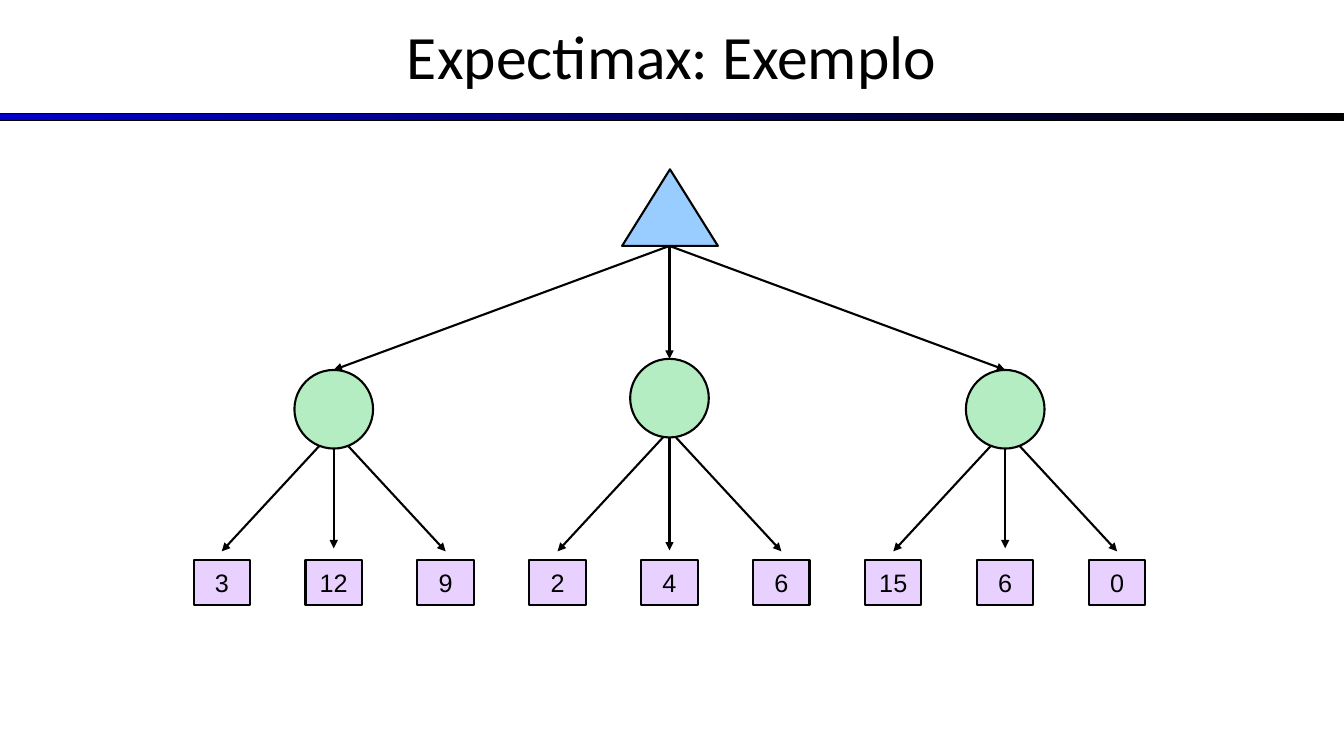
import pptx
import pptx.dml.color
import pptx.enum.shapes
import pptx.enum.text
import pptx.oxml
import pptx.oxml.ns
import pptx.util
from pptx.util import Inches

SHAPES = pptx.enum.shapes.MSO_SHAPE
BLACK = "000000"


def color(value):
    return pptx.dml.color.RGBColor.from_string(value)


def write_text(shape, text, size=18, font="Arial", fill=BLACK, wrap=False):
    frame = shape.text_frame
    frame.word_wrap = wrap
    frame.vertical_anchor = pptx.enum.text.MSO_ANCHOR.MIDDLE
    paragraph = frame.paragraphs[0]
    paragraph.alignment = pptx.enum.text.PP_ALIGN.CENTER
    run = paragraph.add_run()
    run.text = text
    run.font.size = pptx.util.Pt(size)
    run.font.name = font
    run.font.color.rgb = color(fill)


class TreeSlide:
    """Draws the elements of a game tree in one shared style."""

    def __init__(self, slide, line_width=1.5):
        self.slide = slide
        self.line_width = line_width

    def outline(self, line, width=None):
        line.color.rgb = color(BLACK)
        line.width = pptx.util.Pt(width or self.line_width)

    def title(self, text):
        box = self.slide.shapes.add_textbox(Inches(0), Inches(-0.08), Inches(13.33), Inches(1.25))
        write_text(box, text, size=44, font="Calibri", wrap=True)

    def node(self, kind, left, top, width, height, fill=None):
        shape = self.slide.shapes.add_shape(
            kind, Inches(left), Inches(top), Inches(width), Inches(height))
        shape.shadow.inherit = False
        if fill:
            shape.fill.solid()
            shape.fill.fore_color.rgb = color(fill)
        self.outline(shape.line)
        return shape

    def gradient_bar(self, top, height, start, end):
        bar = self.node(SHAPES.RECTANGLE, 0, top, 13.33, height)
        bar.fill.gradient()
        bar.fill.gradient_angle = 0
        for stop, position, value in zip(bar.fill.gradient_stops, (0, 1), (start, end)):
            stop.position = position
            stop.color.rgb = color(value)
        self.outline(bar.line, 0.75)

    def arrow(self, start_x, start_y, end_x, end_y):
        connector = self.slide.shapes.add_connector(
            pptx.enum.shapes.MSO_CONNECTOR.STRAIGHT,
            Inches(start_x), Inches(start_y), Inches(end_x), Inches(end_y))
        self.outline(connector.line)
        head = pptx.oxml.parse_xml(
            f'<a:tailEnd {pptx.oxml.ns.nsdecls("a")} type="triangle"/>')
        connector.line._get_or_add_ln().append(head)
        effects = pptx.oxml.parse_xml(f'<a:effectLst {pptx.oxml.ns.nsdecls("a")}/>')
        connector._element.spPr.append(effects)

    def leaf(self, center, value):
        box = self.node(SHAPES.RECTANGLE, center - 0.28, 5.56, 0.56, 0.44, "E8D1FF")
        write_text(box, str(value))

    def chance_node(self, center, top):
        self.node(SHAPES.OVAL, center - 0.39, top, 0.78, 0.78, "B5EDC2")


def main():
    presentation = pptx.Presentation()
    presentation.slide_width = Inches(13.33)
    presentation.slide_height = Inches(7.5)
    tree = TreeSlide(presentation.slides.add_slide(presentation.slide_layouts[6]))

    tree.gradient_bar(1.13, 0.07, "0000CC", BLACK)
    tree.title("Expectimax: Exemplo")

    root_x, root_bottom = 6.64, 2.44
    tree.node(SHAPES.ISOSCELES_TRIANGLE, root_x - 0.47, 1.68, 0.95, 0.76, "99CCFF")

    leaf_gap = 1.11
    branches = [
        (-1, 3.67, 5.44, (3, 12, 9)),
        (0, 3.56, 5.46, (2, 4, 6)),
        (1, 3.67, 5.44, (15, 6, 0)),
    ]
    for column, circle_top, middle_end, values in branches:
        center = root_x + 3 * leaf_gap * column
        tree.arrow(root_x, root_bottom, center, circle_top)
        for offset, value in zip((-1, 0, 1), values):
            leaf_x = center + leaf_gap * offset
            tree.arrow(center, 4.27, leaf_x, 5.47 if offset else middle_end)
            tree.leaf(leaf_x, value)
        tree.chance_node(center, circle_top)

    presentation.save("out.pptx")


if __name__ == "__main__":
    main()
